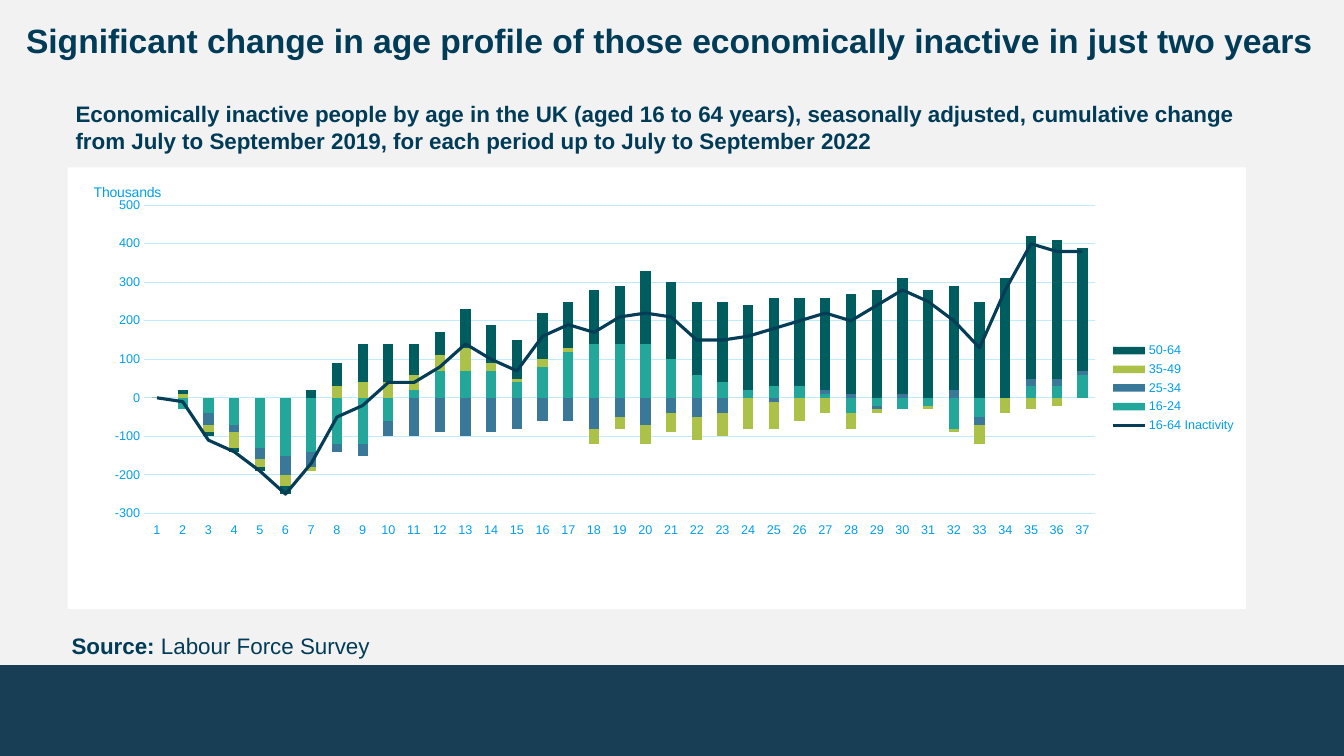
from dataclasses import dataclass

from lxml import etree
from pptx import Presentation
from pptx.chart.chart import Chart
from pptx.chart.data import CategoryChartData
from pptx.dml.color import RGBColor
from pptx.enum.chart import (
    XL_CHART_TYPE, XL_LEGEND_POSITION, XL_MARKER_STYLE, XL_TICK_LABEL_POSITION, XL_TICK_MARK)
from pptx.enum.shapes import MSO_SHAPE
from pptx.oxml import parse_xml
from pptx.oxml.ns import nsdecls, qn
from pptx.slide import Slide
from pptx.util import Inches, Pt

FONT = "Arial"
COLORS = {
    "background": "F2F2F2", "band": "183E56", "title": "003C57", "text": "003B57",
    "axis": "009FEB", "grid": "C0EBFF", "panel": "FFFFFF",
}


@dataclass
class TextItem:
    box: tuple[float, float, float, float]
    runs: list[tuple[str, bool]]
    size: int
    color: str
    inset: tuple[float, float] = (0, 0)
    line_spacing: float = 1.0


@dataclass
class AgeSeries:
    name: str
    color: str
    thousands: list[int]


TEXTS = [
    TextItem((0.16, 0.15, 13.08, 0.5),
             [("Significant change in age profile of those economically inactive in just two years", True)],
             24, "title", (0.1, 0.05)),
    TextItem((0.71, 6.24, 11.9, 0.27), [("Source: ", True), ("Labour Force Survey", False)],
             16, "text", line_spacing=1.1),
    TextItem((0.75, 0.99, 11.9, 0.54),
             [("Economically inactive people by age in the UK (aged 16 to 64 years), seasonally adjusted, "
               "cumulative change from July to September 2019, for each period up to July to September 2022", True)],
             16, "text"),
]

SERIES = [
    AgeSeries("16-24", "24A79B", [
        0, -30, -40, -70, -130, -150, -140, -120, -120, -60, 20, 70, 70, 70, 40, 80, 120, 140, 140,
        140, 100, 60, 40, 20, 30, 30, 10, -40, -20, -30, -20, -80, -50, 0, 30, 30, 60]),
    AgeSeries("25-34", "3A7899", [
        0, 0, -30, -20, -30, -50, -40, -20, -30, -40, -100, -90, -100, -90, -80, -60, -60, -80, -50,
        -70, -40, -50, -40, 0, -10, 0, 10, 10, -10, 10, 0, 20, -20, 0, 20, 20, 10]),
    AgeSeries("35-49", "ABC148", [
        0, 10, -20, -40, -20, -30, -10, 30, 40, 40, 40, 40, 60, 20, 10, 20, 10, -40, -30,
        -50, -50, -60, -60, -80, -70, -60, -40, -40, -10, 0, -10, -10, -50, -40, -30, -20, 0]),
    AgeSeries("50-64", "005D5F", [
        0, 10, -10, -10, -10, -20, 20, 60, 100, 100, 80, 60, 100, 100, 100, 120, 120, 140, 150,
        190, 200, 190, 210, 220, 230, 230, 240, 260, 280, 300, 280, 270, 250, 310, 370, 360, 320]),
    AgeSeries("16-64 Inactivity", "053D57", [
        0, -10, -110, -140, -190, -250, -170, -50, -20, 40, 40, 80, 140, 100, 70, 160, 190, 170, 210,
        220, 210, 150, 150, 160, 180, 200, 220, 200, 240, 280, 250, 200, 130, 280, 400, 380, 380]),
]


def add_band(slide: Slide) -> None:
    shape = slide.shapes.add_shape(MSO_SHAPE.RECTANGLE, Inches(0), Inches(6.6), Inches(13.33), Inches(0.9))
    shape.shadow.inherit = False
    shape.fill.solid()
    shape.fill.fore_color.rgb = RGBColor.from_string(COLORS["band"])
    shape.line.fill.background()


def set_font(font, size: float, color: str) -> None:
    font.name = FONT
    font.size = Pt(size)
    font.color.rgb = RGBColor.from_string(COLORS[color])


def add_text(slide: Slide, item: TextItem) -> None:
    text_frame = slide.shapes.add_textbox(*map(Inches, item.box)).text_frame
    text_frame.word_wrap = True
    horizontal, vertical = map(Inches, item.inset)
    text_frame.margin_left = text_frame.margin_right = horizontal
    text_frame.margin_top = text_frame.margin_bottom = vertical
    paragraph = text_frame.paragraphs[0]
    paragraph.line_spacing = item.line_spacing
    for text, bold in item.runs:
        run = paragraph.add_run()
        run.text = text
        set_font(run.font, item.size, item.color)
        run.font.bold = bold


def layout_xml(target: str, **fractions: float):
    inner = '<c:layoutTarget val="inner"/>' if target == "inner" else ""
    modes = "".join(f'<c:{key}Mode val="edge"/>' for key in ("x", "y"))
    values = "".join(f'<c:{key} val="{value}"/>' for key, value in fractions.items())
    return parse_xml(f'<c:layout {nsdecls("c")}><c:manualLayout>{inner}{modes}{values}'
                     '</c:manualLayout></c:layout>')


def set_layout(parent, layout, position: int) -> None:
    for existing in parent.findall(qn("c:layout")):
        parent.remove(existing)
    parent.insert(position, layout)


def move_total_to_line(chart: Chart) -> None:
    bar_chart = chart.plots[0]._element
    total = bar_chart.findall(qn("c:ser"))[-1]
    bar_chart.remove(total)
    for invert in total.findall(qn("c:invertIfNegative")):
        total.remove(invert)
    line_chart = parse_xml(
        f'<c:lineChart {nsdecls("c")}><c:grouping val="standard"/><c:varyColors val="0"/>'
        '<c:marker val="1"/></c:lineChart>')
    line_chart.insert(2, total)
    for axis_id in bar_chart.findall(qn("c:axId")):
        etree.SubElement(line_chart, qn("c:axId")).set("val", axis_id.get("val"))
    bar_chart.addnext(line_chart)


def format_axes(chart: Chart) -> None:
    category_axis, value_axis = chart.category_axis, chart.value_axis
    for axis in (category_axis, value_axis):
        axis.major_tick_mark = axis.minor_tick_mark = XL_TICK_MARK.NONE
        set_font(axis.tick_labels.font, 9, "axis")
    category_axis.tick_label_position = XL_TICK_LABEL_POSITION.LOW
    value_axis.minimum_scale, value_axis.maximum_scale = -300000, 500000
    value_axis.major_unit = 100000
    value_axis.tick_labels.number_format = "#,##0,"
    value_axis.tick_labels.number_format_is_linked = False
    value_axis.format.line.fill.background()
    value_axis.has_major_gridlines = True
    for line in (category_axis.format.line, value_axis.major_gridlines.format.line):
        line.color.rgb = RGBColor.from_string(COLORS["grid"])
        line.width = Pt(0.75)
    text_frame = value_axis.axis_title.text_frame
    text_frame.text = "Thousands"
    run = text_frame.paragraphs[0].runs[0]
    set_font(run.font, 10, "axis")
    run.font.bold = False
    title = value_axis.axis_title._element
    body = title.find(".//" + qn("a:bodyPr"))
    body.set("rot", "0")
    body.set("vert", "horz")
    set_layout(title, layout_xml("outer", x=0.02, y=0.03), 1)


def add_inactivity_chart(slide: Slide) -> None:
    data = CategoryChartData()
    data.categories = [str(period) for period in range(1, 38)]
    for series in SERIES:
        data.add_series(series.name, [value * 1000 for value in series.thousands])
    chart = slide.shapes.add_chart(XL_CHART_TYPE.COLUMN_STACKED, Inches(0.67), Inches(1.66),
                                   Inches(11.69), Inches(4.38), data).chart
    chart.has_title = False
    set_font(chart.font, 10, "text")
    move_total_to_line(chart)
    columns, line_plot = chart.plots
    columns.gap_width, columns.overlap = 150, 100
    columns.vary_by_categories = False
    for series, age in zip(columns.series, SERIES):
        series.invert_if_negative = False
        series.format.fill.solid()
        series.format.fill.fore_color.rgb = RGBColor.from_string(age.color)
    total = line_plot.series[0]
    total.smooth = False
    total.format.line.color.rgb = RGBColor.from_string(SERIES[-1].color)
    total.format.line.width = Pt(2.25)
    total.marker.style = XL_MARKER_STYLE.NONE
    format_axes(chart)
    chart.has_legend = True
    chart.legend.position = XL_LEGEND_POSITION.RIGHT
    chart.legend.include_in_layout = False
    set_font(chart.legend.font, 9, "axis")
    chart_space = chart._chartSpace
    set_layout(chart_space.find(".//" + qn("c:plotArea")),
               layout_xml("inner", x=0.065, y=0.086, w=0.807, h=0.698), 0)
    chart_space.find(qn("c:chart")).addnext(parse_xml(
        f'<c:spPr {nsdecls("c", "a")}><a:solidFill><a:srgbClr val="{COLORS["panel"]}"/></a:solidFill>'
        '<a:ln><a:noFill/></a:ln></c:spPr>'))


def main() -> None:
    presentation = Presentation()
    presentation.slide_width, presentation.slide_height = Inches(13.33), Inches(7.5)
    slide = presentation.slides.add_slide(presentation.slide_layouts[6])
    slide.background.fill.solid()
    slide.background.fill.fore_color.rgb = RGBColor.from_string(COLORS["background"])
    add_band(slide)
    for item in TEXTS:
        add_text(slide, item)
    add_inactivity_chart(slide)
    presentation.save("out.pptx")


if __name__ == "__main__":
    main()
